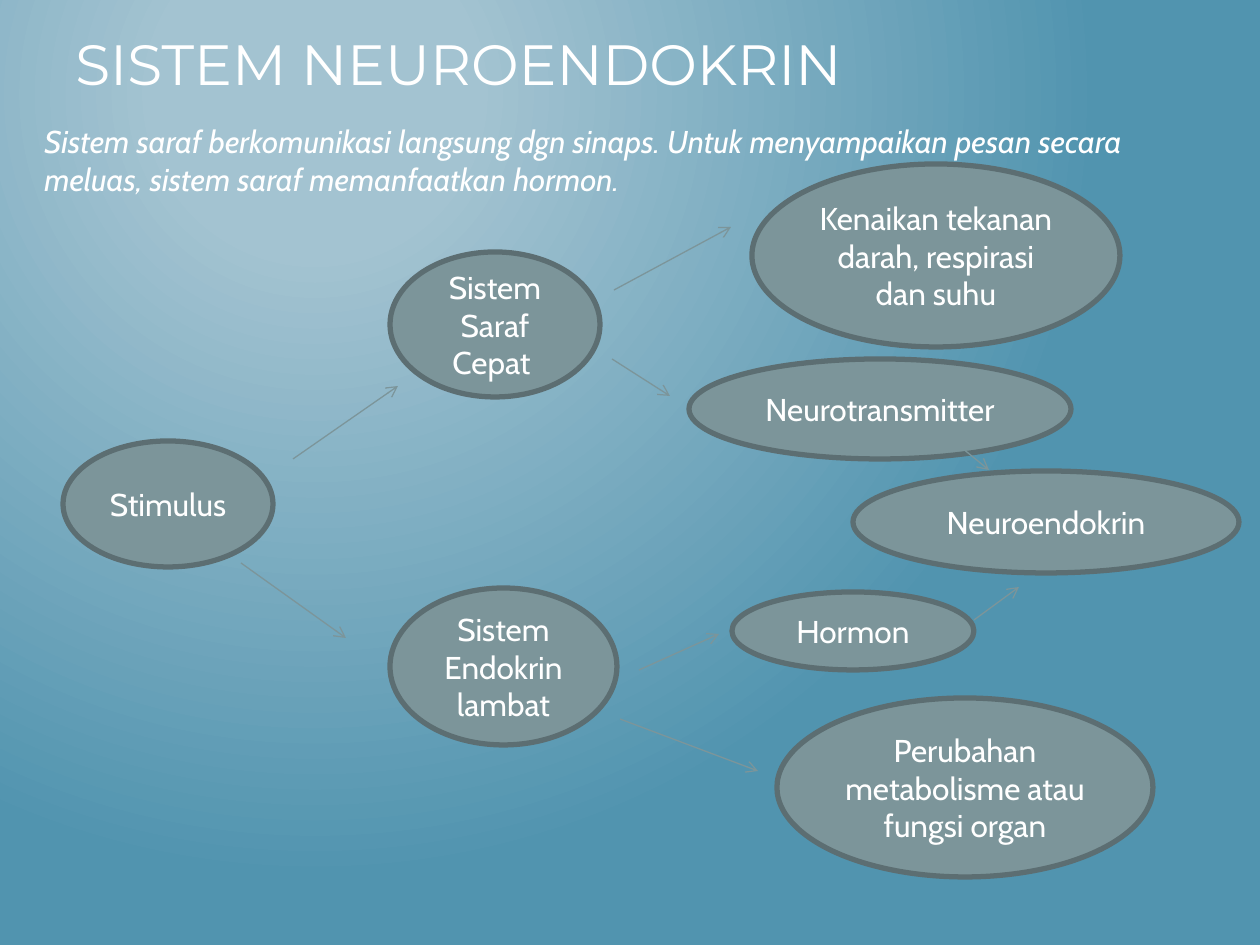
from dataclasses import dataclass

from lxml import etree
from pptx import Presentation, util as u
from pptx.dml.color import RGBColor
from pptx.enum import shapes, text
from pptx.oxml import parse_xml
from pptx.oxml.ns import nsdecls, qn

EMU_PER_PX = 914400 / 126
WHITE, GREY, DARK_GREY = "FFFFFF", "7C959A", "5C6E72"
BACKGROUND = f"""<a:gradFill {nsdecls('a')} rotWithShape="1"><a:gsLst>
<a:gs pos="20000"><a:srgbClr val="A3C3D1"/></a:gs>
<a:gs pos="100000"><a:srgbClr val="5194AF"/></a:gs></a:gsLst>
<a:path path="circle"><a:fillToRect l="50000" t="20000" r="100000" b="100000"/></a:path>
</a:gradFill>"""


@dataclass
class Node:
    label: str
    left: int
    top: int
    width: int
    height: int


@dataclass
class Arrow:
    start: tuple[int, int]
    end: tuple[int, int]


NODES = [
    Node("Stimulus", 63, 441, 210, 126),
    Node("Sistem Saraf Cepat ", 390, 252, 210, 145),
    Node("Sistem Endokrin lambat", 390, 588, 227, 157),
    Node("Kenaikan tekanan darah, respirasi dan suhu", 752, 164, 368, 183),
    Node("Perubahan metabolisme atau fungsi organ", 777, 698, 376, 179),
    Node("Neurotransmitter", 689, 359, 382, 100),
    Node("Hormon", 732, 592, 242, 78),
    Node("Neuroendokrin", 853, 471, 386, 102),
]
ARROWS = [
    Arrow((293, 459), (398, 386)),
    Arrow((614, 290), (731, 227)),
    Arrow((241, 563), (346, 638)),
    Arrow((620, 719), (758, 771)),
    Arrow((612, 359), (670, 396)),
    Arrow((639, 670), (719, 634)),
    Arrow((962, 448), (989, 470)),
    Arrow((974, 620), (1019, 587)),
]


def px(*values: int) -> list[int]:
    return [round(value * EMU_PER_PX) for value in values]


def color(value: str) -> RGBColor:
    return RGBColor.from_string(value)


def set_all(target, values: dict) -> None:
    for name, value in values.items():
        setattr(target, name, value)


def write(shape, content: str, font: dict, frame: dict, align=text.PP_ALIGN.LEFT) -> None:
    set_all(shape.text_frame, {"word_wrap": True, **frame})
    paragraph = shape.text_frame.paragraphs[0]
    paragraph.alignment = align
    run = paragraph.add_run()
    run.text = content
    set_all(run.font, {"name": "Cabin", "size": u.Pt(18), **font})
    run.font.color.rgb = color(WHITE)


def add_text(slide, box: Node, font: dict, anchor) -> None:
    shape = slide.shapes.add_textbox(*px(box.left, box.top, box.width, box.height))
    write(shape, box.label, font, {"vertical_anchor": anchor})


def add_node(slide, node: Node) -> None:
    bounds = px(node.left, node.top, node.width, node.height)
    shape = slide.shapes.add_shape(shapes.MSO_SHAPE.OVAL, *bounds)
    shape.shadow.inherit = False
    shape.fill.solid()
    shape.fill.fore_color.rgb = color(GREY)
    shape.line.color.rgb = color(DARK_GREY)
    shape.line.width = u.Pt(3)
    write(shape, node.label, {}, {"vertical_anchor": text.MSO_ANCHOR.MIDDLE}, text.PP_ALIGN.CENTER)


def add_arrow(slide, arrow: Arrow) -> None:
    ends = px(*arrow.start, *arrow.end)
    connector = slide.shapes.add_connector(shapes.MSO_CONNECTOR.STRAIGHT, *ends)
    connector.line.color.rgb = color(GREY)
    connector.line.width = u.Pt(0.75)
    etree.SubElement(connector.line._get_or_add_ln(), qn("a:tailEnd"), type="arrow")
    etree.SubElement(connector._element.spPr, qn("a:effectLst"))


def set_background(slide) -> None:
    slide.background.fill.solid()
    solid = slide.element.find(".//" + qn("a:solidFill"))
    solid.getparent().replace(solid, parse_xml(BACKGROUND))


def main() -> None:
    """Build the neuroendocrine system slide."""
    presentation = Presentation()
    width, height = px(1260, 945)
    set_all(presentation, {"slide_width": width, "slide_height": height})
    slide = presentation.slides.add_slide(presentation.slide_layouts[6])
    set_background(slide)
    title = Node("SISTEM NEUROENDOKRIN", 63, 21, 1134, 84)
    add_text(slide, title, {"name": "Montserrat", "size": u.Pt(32.4)}, text.MSO_ANCHOR.MIDDLE)
    intro = Node(
        "Sistem saraf berkomunikasi langsung dgn sinaps. Untuk menyampaikan pesan "
        "secara meluas, sistem saraf memanfaatkan hormon.",
        32, 116, 1207, 795,
    )
    add_text(slide, intro, {"italic": True}, text.MSO_ANCHOR.TOP)
    for node in NODES:
        add_node(slide, node)
    for arrow in ARROWS:
        add_arrow(slide, arrow)
    presentation.save("out.pptx")


if __name__ == "__main__":
    main()
